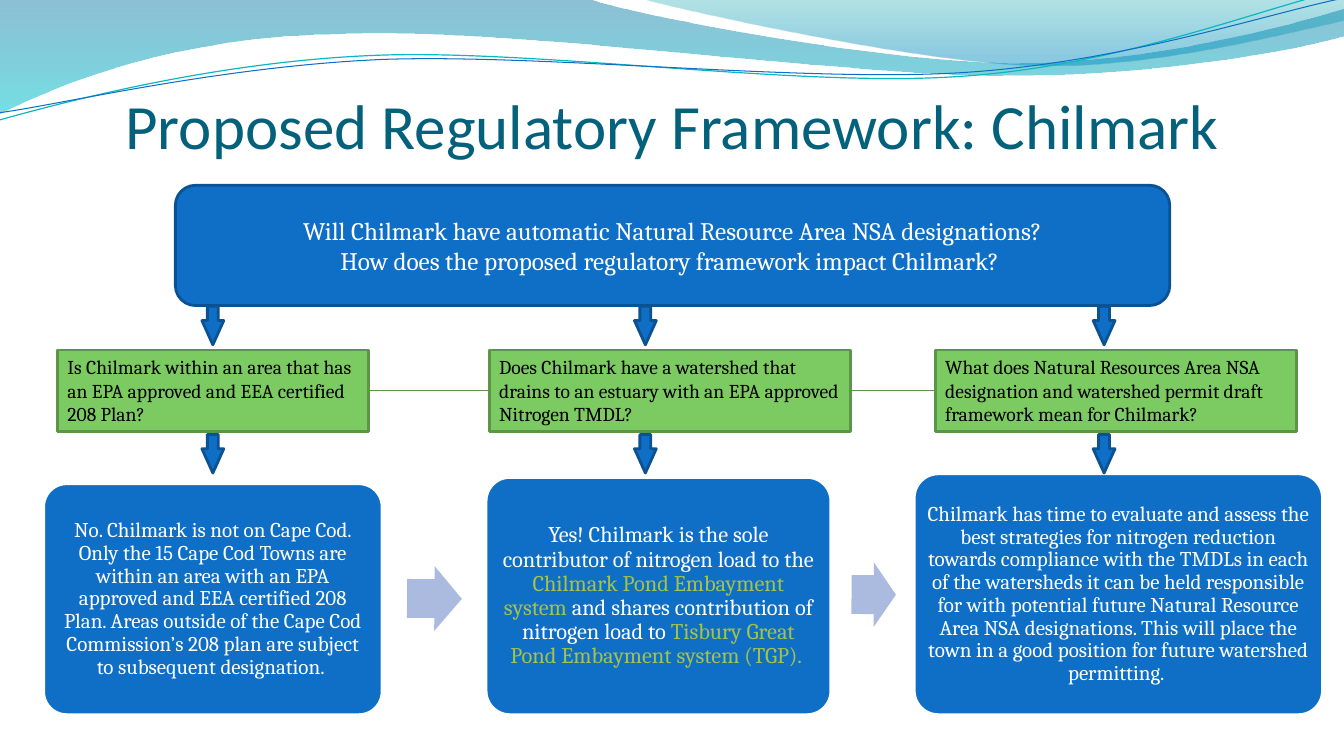
from dataclasses import dataclass
from itertools import pairwise

from pptx import Presentation
from pptx import util as u
from pptx.dml.color import RGBColor
from pptx.enum import shapes, text
from pptx.oxml import ns, xmlchemy

Cm, Pt = u.Cm, u.Pt
Kind = shapes.MSO_SHAPE
Align, Anchor = text.PP_ALIGN, text.MSO_ANCHOR


@dataclass(frozen=True)
class Theme:
    """Colours, fonts and type sizes of the slide."""

    blue: str = "0F6FC6"
    dark_blue: str = "0B5292"
    teal: str = "0AB8BF"
    green: str = "7CCA62"
    dark_green: str = "5C9549"
    lavender: str = "ABBBDF"
    lime: str = "A5C249"
    heading: str = "04617B"
    white: str = "FFFFFF"
    black: str = "000000"
    heading_font: str = "Calibri"
    body_font: str = "Cambria"
    heading_size: int = 45
    lead_size: int = 18
    emphasis_size: int = 16
    answer_size: int = 15
    question_size: int = 14


def rgb(value):
    """Turn a hex string into a colour."""
    return RGBColor.from_string(value)


def write(box, paragraphs, *, size, color, font, align=Align.LEFT, anchor=Anchor.TOP,
          margins=(0.25, 0.13), spacing=None):
    """Write paragraphs, each a list of (text, colour or None) spans, into a box."""
    frame = box.text_frame
    frame.word_wrap = True
    frame.vertical_anchor = anchor
    frame.margin_left = frame.margin_right = Cm(margins[0])
    frame.margin_top = frame.margin_bottom = Cm(margins[1])
    for index, spans in enumerate(paragraphs):
        para = frame.add_paragraph() if index else frame.paragraphs[0]
        para.alignment = align
        para.line_spacing = spacing
        for words, tint in spans:
            span = para.add_run()
            span.text = words
            span.font.name = font
            span.font.size = Pt(size)
            span.font.color.rgb = rgb(tint or color)


class Composer:
    """Draws styled elements on the current slide; lengths are centimetres."""

    def __init__(self, page, theme):
        """Keep the page and its theme."""
        self.page = page
        self.theme = theme

    def shape(self, kind, bounds, fill, line=None, adjust=(), turn=0):
        """Add a filled preset shape."""
        shape = self.page.shapes.add_shape(kind, *map(Cm, bounds))
        shape.shadow.inherit = False
        shape.rotation = turn
        for index, value in enumerate(adjust):
            shape.adjustments[index] = value
        shape.fill.solid()
        shape.fill.fore_color.rgb = rgb(fill)
        if line:
            shape.line.color.rgb = rgb(line)
            shape.line.width = Pt(2)
        else:
            shape.line.fill.background()
        return shape

    def outline(self, start, segments, closed):
        """Add a freeform of straight (2 numbers) and cubic (6 numbers) segments."""
        builder = self.page.shapes.build_freeform(*map(Cm, start))
        points = [tuple(map(Cm, segment[i:i + 2]))
                  for segment in segments for i in range(0, len(segment), 2)]
        builder.add_line_segments(points, close=closed)
        shape = builder.convert_to_shape()
        shape.shadow.inherit = False
        moves = iter(list(shape._element.spPr.iter(ns.qn("a:lnTo"))))
        for segment in segments:
            first, *others = [next(moves) for _ in range(len(segment) // 2)]
            if others:
                curve = xmlchemy.OxmlElement("a:cubicBezTo")
                first.addprevious(curve)
                for move in (first, *others):
                    curve.append(move[0])
                    move.getparent().remove(move)
        return shape

    def wave(self, start, segments, stops):
        """Add a translucent wave; stops are (position, colour, opacity percent)."""
        shape = self.outline(start, segments, True)
        shape.line.fill.background()
        shape.fill.gradient()
        shape.fill.gradient_angle = 270
        for stop, (position, color, _) in zip(shape.fill.gradient_stops, stops):
            stop.position = position
            stop.color.rgb = rgb(color)
        tints = shape._element.spPr.iter(ns.qn("a:srgbClr"))
        for tint, (_, _, opacity) in zip(tints, stops):
            alpha = xmlchemy.OxmlElement("a:alpha")
            alpha.set("val", str(opacity * 1000))
            tint.append(alpha)

    def ripple(self, start, segments, color, width):
        """Add a thin curved line."""
        shape = self.outline(start, segments, False)
        shape.fill.background()
        shape.line.color.rgb = rgb(color)
        shape.line.width = Pt(width)

    def title(self, words, bounds):
        """Add the slide heading."""
        look = self.theme
        box = self.page.shapes.add_textbox(*map(Cm, bounds))
        write(box, [[(words, None)]], size=look.heading_size, color=look.heading,
              font=look.heading_font, align=Align.CENTER, margins=(0, 0))

    def lead(self, lines, bounds):
        """Add the wide box with the leading questions."""
        look = self.theme
        box = self.shape(Kind.ROUNDED_RECTANGLE, bounds, look.blue, look.dark_blue)
        write(box, [[(line, None)] for line in lines], size=look.lead_size,
              color=look.white, font=look.body_font, align=Align.CENTER,
              anchor=Anchor.MIDDLE)

    def question(self, words, left, width):
        """Add a green question box."""
        look = self.theme
        box = self.shape(Kind.RECTANGLE, (left, 8.82, width, 2.06), look.green, look.dark_green)
        write(box, [[(words, None)]], size=look.question_size, color=look.black,
              font=look.body_font)
        return box

    def answer(self, spans, left, top, width, size):
        """Add a blue answer box that ends on the common bottom line."""
        look = self.theme
        box = self.shape(Kind.ROUNDED_RECTANGLE, (left, top, width, 18.01 - top),
                         look.blue, look.white, (0.1,))
        write(box, [spans], size=size, color=look.white, font=look.body_font,
              align=Align.CENTER, anchor=Anchor.MIDDLE, margins=(0.15, 0.15), spacing=0.9)

    def link(self, first, second):
        """Join two boxes from right side to left side."""
        line = self.page.shapes.add_connector(shapes.MSO_CONNECTOR.STRAIGHT, 0, 0, 0, 0)
        line.begin_connect(first, 3)
        line.end_connect(second, 1)
        line.line.color.rgb = rgb(self.theme.dark_green)
        line.line.width = Pt(0.75)
        line._element.spPr.append(xmlchemy.OxmlElement("a:effectLst"))


def main():
    """Build the slide and save it."""
    deck = Presentation()
    deck.slide_width, deck.slide_height = Cm(33.87), Cm(19.05)
    look = Theme()
    page = Composer(deck.slides.add_slide(deck.slide_layouts[6]), look)

    page.wave((0, 0), [
        (14.91, 0), (16.1, 0.43, 22.48, 1.6, 25.68, 1.6), (28.91, 1.6, 32.46, 0.66, 33.87, 0.23),
        (33.87, 0.91), (33.3, 1.12, 29.46, 1.93, 25.25, 1.91),
        (21.06, 1.91, 12.93, 0.71, 8.71, 0.86), (4.37, 0.91, 1.55, 2.11, 0, 2.87),
    ], [(0, "0074A1", 45), (1, "00C6CF", 55)])
    page.wave((16.23, 0), [
        (17.25, 0.28, 23.09, 1.57, 26.04, 1.65), (28.98, 1.75, 32.56, 0.81, 33.87, 0.53),
        (33.87, 0),
    ], [(0, "00A1A9", 30), (0.8, "008BBF", 45)])
    page.ripple((0, 3.02), [
        (1.63, 2.57, 5.36, 1.57, 9.37, 1.4), (13.39, 1.22, 20.07, 2.21, 24.13, 1.93),
        (28.19, 1.68, 31.8, 0.2, 33.81, -0.25)], look.teal, 0.85)
    page.ripple((0, 2.84), [
        (1.6, 2.62, 5.54, 1.68, 9.6, 1.5), (13.64, 1.35, 20.22, 2.08, 24.26, 1.83),
        (28.32, 1.57, 31.88, 0.36, 33.87, -0.05)], look.blue, 0.75)
    page.title("Proposed Regulatory Framework: Chilmark", (1.7, 2.17, 30.48, 1.95))

    page.answer([("No. Chilmark is not on Cape Cod. Only the 15 Cape Cod Towns are within an area "
                  "with an EPA approved and EEA certified 208 Plan. Areas outside of the Cape Cod "
                  "Commission’s 208 plan are subject to subsequent designation. ", None)],
                1.1, 12.19, 8.53, look.answer_size)
    page.answer([("Yes! Chilmark is the sole contributor of nitrogen load to the ", None),
                 ("Chilmark Pond Embayment system ", look.lime),
                 ("and shares contribution of nitrogen load to ", None),
                 ("Tisbury Great Pond Embayment system (TGP). ", look.lime)],
                12.25, 12.03, 8.69, look.emphasis_size)
    page.answer([("Chilmark has time to evaluate and assess the best strategies for nitrogen "
                  "reduction towards compliance with the TMDLs in each of the watersheds it can be "
                  "held responsible for with potential future Natural Resource Area NSA "
                  "designations. This will place the town in a good position for future watershed "
                  "permitting. ", None)], 23.04, 11.94, 10.29, look.answer_size)
    for bounds, turn in (((10.26, 14.27, 1.38, 1.63), 0.5), ((21.46, 14.17, 1.12, 1.63), 0.2)):
        page.shape(Kind.RIGHT_ARROW, bounds, look.lavender, adjust=(0.6, 0.5), turn=turn)

    questions = [page.question(*entry) for entry in (
        ("Is Chilmark within an area that has an EPA approved and EEA certified 208 Plan?",
         1.45, 7.84),
        ("Does Chilmark have a watershed that drains to an estuary with an EPA approved "
         "Nitrogen TMDL?", 12.33, 9.1),
        ("What does Natural Resources Area NSA designation and watershed permit draft framework "
         "mean for Chilmark?", 23.57, 9.1))]
    page.lead(["Will Chilmark have automatic Natural Resource Area NSA designations?",
               "How does the proposed regulatory framework impact Chilmark? "],
              (4.42, 4.67, 25.06, 3.03))
    for first, second in pairwise(questions):
        page.link(first, second)
    for top in (7.72, 10.95):
        for left in (5.09, 15.99, 27.55):
            page.shape(Kind.DOWN_ARROW, (left, top, 0.55, 0.97), look.blue, look.dark_blue,
                       (0.5, 1.11))
    deck.save("out.pptx")


if __name__ == "__main__":
    main()
